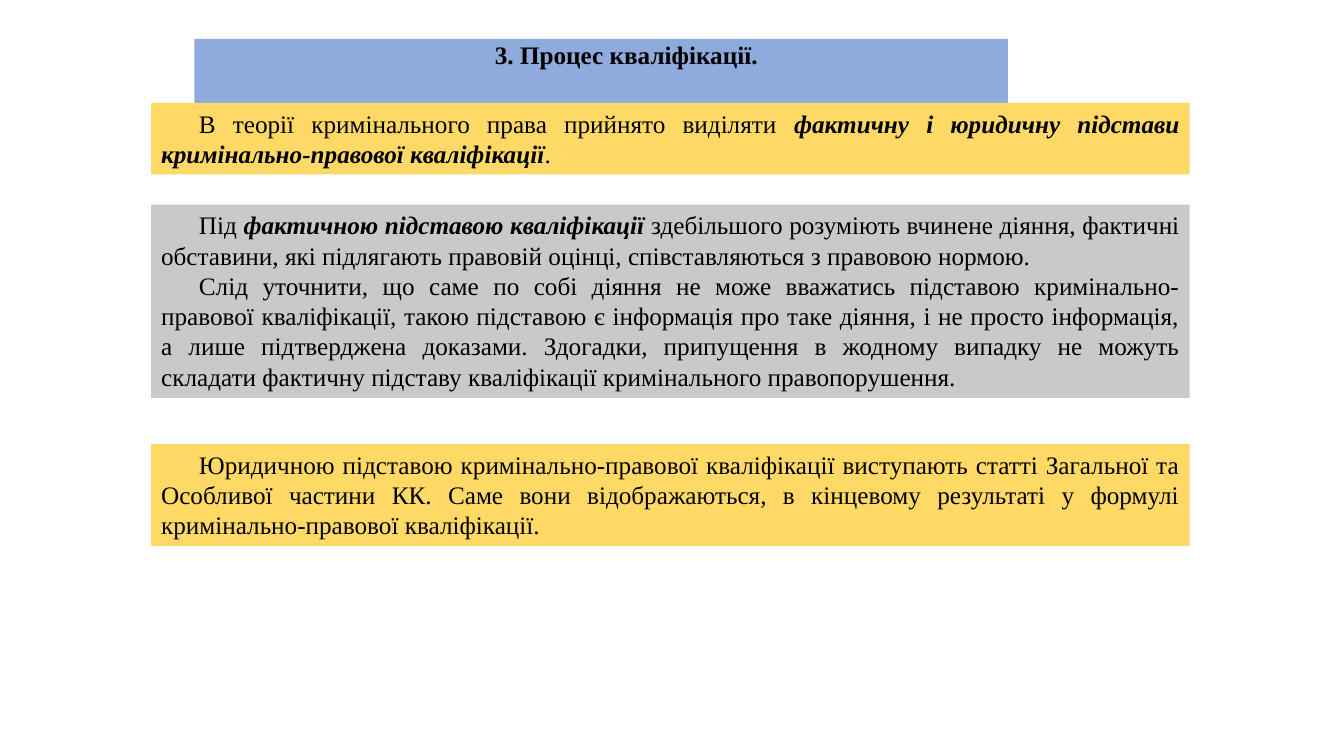
from dataclasses import dataclass

import pptx
import pptx.dml.color
import pptx.enum.text
import pptx.presentation
import pptx.shapes.autoshape
import pptx.slide
import pptx.text.text
import pptx.util

PX = 9525  # EMU per px, 96 px to the inch
FONT = "Times New Roman"
FONT_SIZE = pptx.util.Pt(18)
BLACK = pptx.dml.color.RGBColor(0x00, 0x00, 0x00)
BLUE = pptx.dml.color.RGBColor(0x8F, 0xAA, 0xDC)
YELLOW = pptx.dml.color.RGBColor(0xFF, 0xD9, 0x66)
GRAY = pptx.dml.color.RGBColor(0xC9, 0xC9, 0xC9)

PANEL_LEFT = 144
PANEL_WIDTH = 989
FIRST_LINE_INDENT = 36
TITLE_MARGIN = 48


@dataclass(frozen=True)
class TextRun:
    text: str
    bold: bool = False
    italic: bool = False


@dataclass(frozen=True)
class Panel:
    top: int
    height: int
    color: pptx.dml.color.RGBColor
    paragraphs: list[list[TextRun]]


PANELS = [
    Panel(98, 68, YELLOW, [[
        TextRun("В теорії кримінального права прийнято виділяти "),
        TextRun("фактичну і юридичну підстави кримінально-правової кваліфікації", True, True),
        TextRun("."),
    ]]),
    Panel(195, 184, GRAY, [
        [
            TextRun("Під "),
            TextRun("фактичною підставою кваліфікації ", True, True),
            TextRun("здебільшого розуміють вчинене діяння, фактичні обставини, які "
                    "підлягають правовій оцінці, співставляються з правовою нормою."),
        ],
        [
            TextRun("Слід уточнити, що саме по собі діяння не може вважатись підставою "
                    "кримінально-правової кваліфікації, такою підставою є інформація про "
                    "таке діяння, і не просто інформація, а лише підтверджена доказами. "
                    "Здогадки, припущення в жодному випадку не можуть складати фактичну "
                    "підставу кваліфікації кримінального правопорушення."),
        ],
    ]),
    Panel(423, 97, YELLOW, [[
        TextRun("Юридичною підставою кримінально-правової кваліфікації виступають статті "
                "Загальної та Особливої частини КК. Саме вони відображаються, в кінцевому "
                "результаті у формулі кримінально-правової кваліфікації."),
    ]]),
]


def px(length: int) -> pptx.util.Emu:
    return pptx.util.Emu(length * PX)


def set_indents(paragraph: pptx.text.text._Paragraph, margin: int, first_line: int) -> None:
    properties = paragraph._p.get_or_add_pPr()
    properties.set("marL", str(px(margin)))
    properties.set("indent", str(px(first_line)))


def add_runs(paragraph: pptx.text.text._Paragraph, text_runs: list[TextRun]) -> None:
    for text_run in text_runs:
        run = paragraph.add_run()
        run.text = text_run.text
        run.font.name = FONT
        run.font.size = FONT_SIZE
        run.font.bold = text_run.bold
        run.font.italic = text_run.italic
        run.font.color.rgb = BLACK


def format_box(shape: pptx.shapes.autoshape.Shape, color: pptx.dml.color.RGBColor) -> None:
    """Fill the box and let it wrap and grow with text set from its top."""
    shape.fill.solid()
    shape.fill.fore_color.rgb = color
    frame = shape.text_frame
    frame.word_wrap = True
    frame.auto_size = pptx.enum.text.MSO_AUTO_SIZE.SHAPE_TO_FIT_TEXT
    frame.vertical_anchor = pptx.enum.text.MSO_ANCHOR.TOP


def fill_title(slide: pptx.slide.Slide) -> None:
    title = slide.shapes.title
    title.left, title.top, title.width, title.height = px(185), px(37), px(775), px(34)
    format_box(title, BLUE)
    paragraph = title.text_frame.paragraphs[0]
    paragraph.alignment = pptx.enum.text.PP_ALIGN.CENTER
    paragraph.line_spacing = pptx.util.Pt(18)
    paragraph.space_after = pptx.util.Pt(10)
    set_indents(paragraph, TITLE_MARGIN, 0)
    add_runs(paragraph, [TextRun("3. Процес кваліфікації.", bold=True)])


def add_panel(slide: pptx.slide.Slide, panel: Panel) -> None:
    box = slide.shapes.add_textbox(
        px(PANEL_LEFT), px(panel.top), px(PANEL_WIDTH), px(panel.height))
    format_box(box, panel.color)
    frame = box.text_frame
    for index, text_runs in enumerate(panel.paragraphs):
        paragraph = frame.add_paragraph() if index else frame.paragraphs[0]
        paragraph.alignment = pptx.enum.text.PP_ALIGN.JUSTIFY
        set_indents(paragraph, 0, FIRST_LINE_INDENT)
        add_runs(paragraph, text_runs)


def main() -> None:
    presentation = pptx.Presentation()
    presentation.slide_width = px(1280)
    presentation.slide_height = px(720)
    title_only_layout = presentation.slide_layouts[5]
    slide = presentation.slides.add_slide(title_only_layout)
    fill_title(slide)
    for panel in PANELS:
        add_panel(slide, panel)
    presentation.save("out.pptx")


if __name__ == "__main__":
    main()
